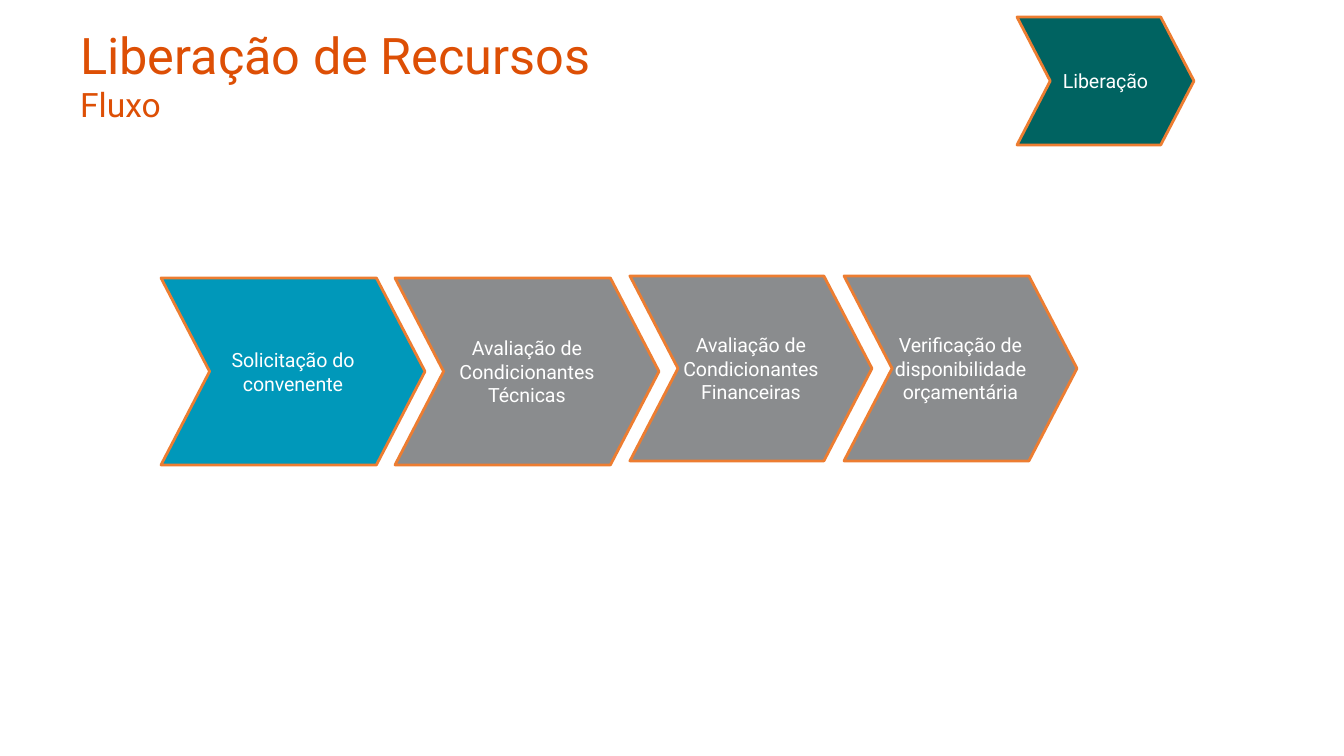
from pptx import Presentation, util as u
from pptx.dml.color import RGBColor
from pptx.enum import shapes, text

SCALE = 914400 / 134.4
ORANGE = RGBColor(0xDD, 0x4F, 0x05)
OUTLINE = RGBColor(0xED, 0x7D, 0x31)
GREEN = RGBColor(0x00, 0x63, 0x61)
BLUE = RGBColor(0x00, 0x98, 0xBA)
GRAY = RGBColor(0x8A, 0x8C, 0x8E)
WHITE = RGBColor(0xFF, 0xFF, 0xFF)

STAGES = [
    ("Liberação", GREEN, (1017, 17, 177, 128)),
    ("Avaliação de Condicionantes Financeiras", GRAY, (630, 276, 242, 185)),
    ("Verificação de disponibilidade orçamentária", GRAY, (844, 276, 233, 185)),
    ("Avaliação de Condicionantes Técnicas", GRAY, (395, 278, 264, 187)),
    ("Solicitação do convenente", BLUE, (161, 278, 264, 187)),
]


def px(length):
    """Turn a length in px into EMU."""
    return u.Emu(round(length * SCALE))


def add_run(paragraph, content, *, size, color, font="Roboto"):
    """Append formatted text to a paragraph."""
    run = paragraph.add_run()
    run.text = content
    run.font.name = font
    run.font.size = u.Pt(size)
    run.font.color.rgb = color


def add_title(slide, title, subtitle):
    """Add the heading with its smaller second line."""
    box = slide.shapes.add_textbox(px(67), px(31), px(1210), px(86))
    frame = box.text_frame
    frame.word_wrap = True
    frame.vertical_anchor = text.MSO_ANCHOR.MIDDLE
    paragraph = frame.paragraphs[0]
    add_run(paragraph, title, size=27, color=ORANGE)
    paragraph.add_line_break()
    add_run(paragraph, subtitle, size=18, color=ORANGE)


def add_stage(slide, label, fill, bounds):
    """Add one labelled chevron of the flow."""
    shape = slide.shapes.add_shape(shapes.MSO_SHAPE.CHEVRON, *map(px, bounds))
    shape.adjustments[0] = 0.26
    shape.shadow.inherit = False
    shape.fill.solid()
    shape.fill.fore_color.rgb = fill
    shape.line.color.rgb = OUTLINE
    shape.line.width = u.Pt(1.5)
    frame = shape.text_frame
    frame.word_wrap = True
    frame.margin_left = frame.margin_right = 0
    frame.vertical_anchor = text.MSO_ANCHOR.MIDDLE
    paragraph = frame.paragraphs[0]
    paragraph.alignment = text.PP_ALIGN.CENTER
    add_run(paragraph, label, size=10.5, color=WHITE)


def main():
    """Build and save the slide."""
    presentation = Presentation()
    presentation.slide_width = px(1344)
    presentation.slide_height = px(756)
    slide = presentation.slides.add_slide(presentation.slide_layouts[6])
    add_title(slide, "Liberação de Recursos", "Fluxo")
    for label, fill, bounds in STAGES:
        add_stage(slide, label, fill, bounds)
    presentation.save("out.pptx")


if __name__ == "__main__":
    main()
